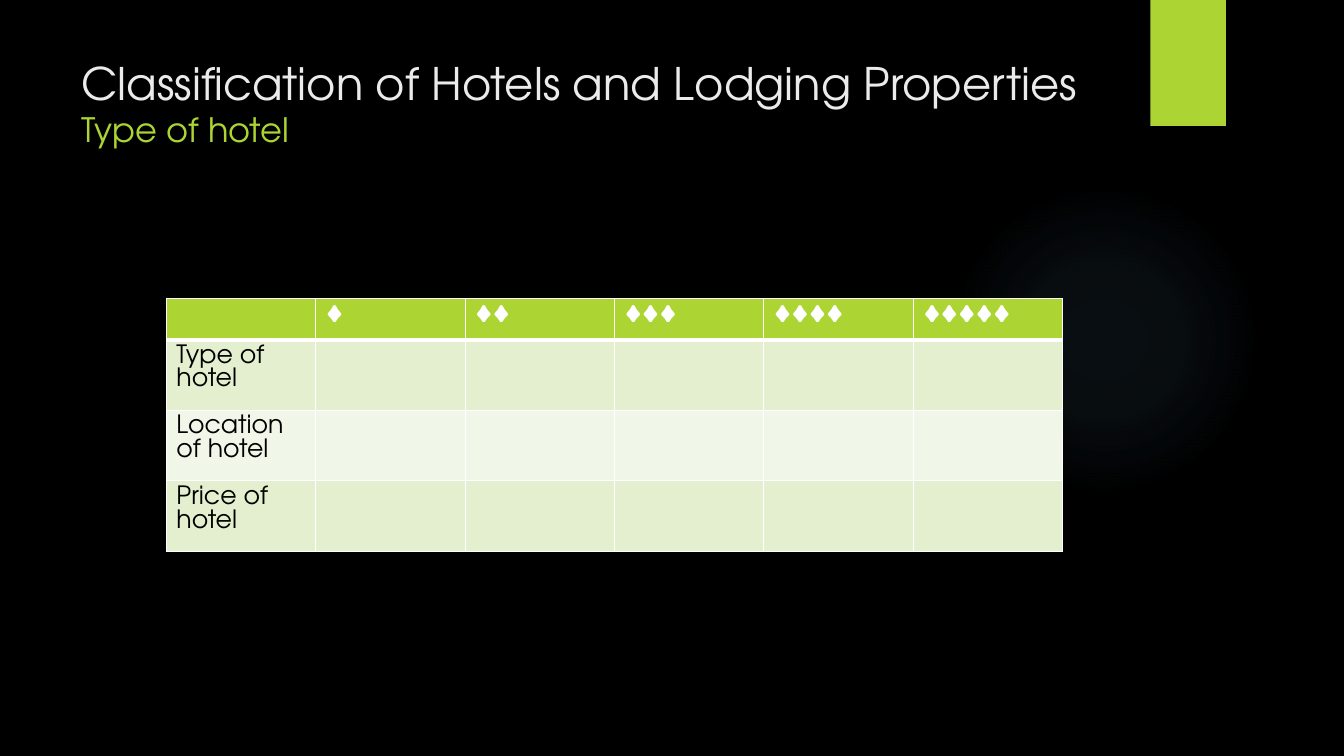
from pptx import Presentation
from pptx import util as u
from pptx.dml.color import RGBColor
from pptx.enum import shapes, text
from pptx.oxml import parse_xml
from pptx.oxml.ns import nsdecls, qn

BLACK = RGBColor(0x00, 0x00, 0x00)
WHITE = RGBColor(0xFF, 0xFF, 0xFF)
PALE = RGBColor(0xEB, 0xEB, 0xEB)
LIME = RGBColor(0xAC, 0xD4, 0x33)
BAND_DARK = RGBColor(0xE3, 0xEF, 0xCE)
BAND_LIGHT = RGBColor(0xF1, 0xF7, 0xE8)
SKY = RGBColor(0x7A, 0xC4, 0xF0)
FONT = "TeX Gyre Adventor"

RATINGS = 5
TOPICS = ["Type of hotel", "Location of hotel", "Price of hotel"]
HEADER_H, ROW_H = 0.41, 0.56


def inches(*lengths):
    return [u.Inches(n) for n in lengths]


def add_plain_shape(s, kind, box):
    sp = s.shapes.add_shape(kind, *inches(*box))
    sp.shadow.inherit = False
    sp.line.fill.background()
    return sp


def add_glow(s, box):
    sp = add_plain_shape(s, shapes.MSO_SHAPE.OVAL, box)
    stops = "".join(
        f'<a:gs pos="{pos * 1000}"><a:srgbClr val="{SKY}">'
        f'<a:alpha val="{alpha * 1000}"/></a:srgbClr></a:gs>'
        for pos, alpha in [(0, 7), (36, 6), (69, 0)])
    grad = parse_xml(
        f'<a:gradFill {nsdecls("a")} rotWithShape="1"><a:gsLst>{stops}</a:gsLst>'
        '<a:path path="circle"><a:fillToRect l="50000" t="50000" r="50000" b="50000"/>'
        '</a:path></a:gradFill>')
    sp._element.spPr.find(qn("a:prstGeom")).addnext(grad)


def add_ribbon(s, box):
    sp = add_plain_shape(s, shapes.MSO_SHAPE.RECTANGLE, box)
    sp.fill.solid()
    sp.fill.fore_color.rgb = LIME


def add_title(s, box):
    tf = s.shapes.add_textbox(*inches(*box)).text_frame
    tf.word_wrap = True
    tf.vertical_anchor = text.MSO_ANCHOR.TOP
    p = tf.paragraphs[0]
    p.font.name = FONT
    lines = [("Classification of Hotels and Lodging Properties", 32, PALE),
             ("Type of hotel", 24, LIME)]
    for i, (words, size, color) in enumerate(lines):
        if i:
            p.add_line_break()
        r = p.add_run()
        r.text = words
        r.font.name = FONT
        r.font.size = u.Pt(size)
        r.font.color.rgb = color


def set_borders(cell, bottom):
    tcPr = cell._tc.get_or_add_tcPr()
    widths = {"lnL": 1, "lnR": 1, "lnT": 1, "lnB": bottom}
    for i, (side, width) in enumerate(widths.items()):
        tcPr.insert(i, parse_xml(
            f'<a:{side} {nsdecls("a")} w="{u.Pt(width)}"><a:solidFill>'
            f'<a:srgbClr val="{WHITE}"/></a:solidFill></a:{side}>'))


def add_rating_table(s, box):
    left, top, width, height = box
    rows = [[""] + ["♦" * n for n in range(1, RATINGS + 1)]]
    rows += [[topic] + [""] * RATINGS for topic in TOPICS]
    table = s.shapes.add_table(len(rows), RATINGS + 1, *inches(*box)).table
    for col in table.columns:
        col.width = u.Inches(width / (RATINGS + 1))
    for i, row in enumerate(rows):
        header = i == 0
        table.rows[i].height = u.Inches(HEADER_H if header else ROW_H)
        fill = LIME if header else BAND_DARK if i % 2 else BAND_LIGHT
        for j, words in enumerate(row):
            cell = table.cell(i, j)
            cell.fill.solid()
            cell.fill.fore_color.rgb = fill
            set_borders(cell, 3 if header else 1)
            cell.text = words
            p = cell.text_frame.paragraphs[0]
            p.font.name = FONT
            p.font.size = u.Pt(18)
            p.font.bold = header
            p.font.color.rgb = WHITE if header else BLACK


def build_slide(prs):
    s = prs.slides.add_slide(prs.slide_layouts[6])
    s.background.fill.solid()
    s.background.fill.fore_color.rgb = BLACK
    add_glow(s, (9.41, 1.83, 3.08, 3.08))
    add_ribbon(s, (11.41, 0, 0.75, 1.25))
    add_title(s, (0.71, 0.5, 10.29, 1.53))
    add_rating_table(s, (1.65, 2.96, 8.89, HEADER_H + len(TOPICS) * ROW_H))


def main():
    prs = Presentation()
    prs.slide_width, prs.slide_height = inches(13.33, 7.5)
    build_slide(prs)
    prs.save("out.pptx")


if __name__ == "__main__":
    main()
